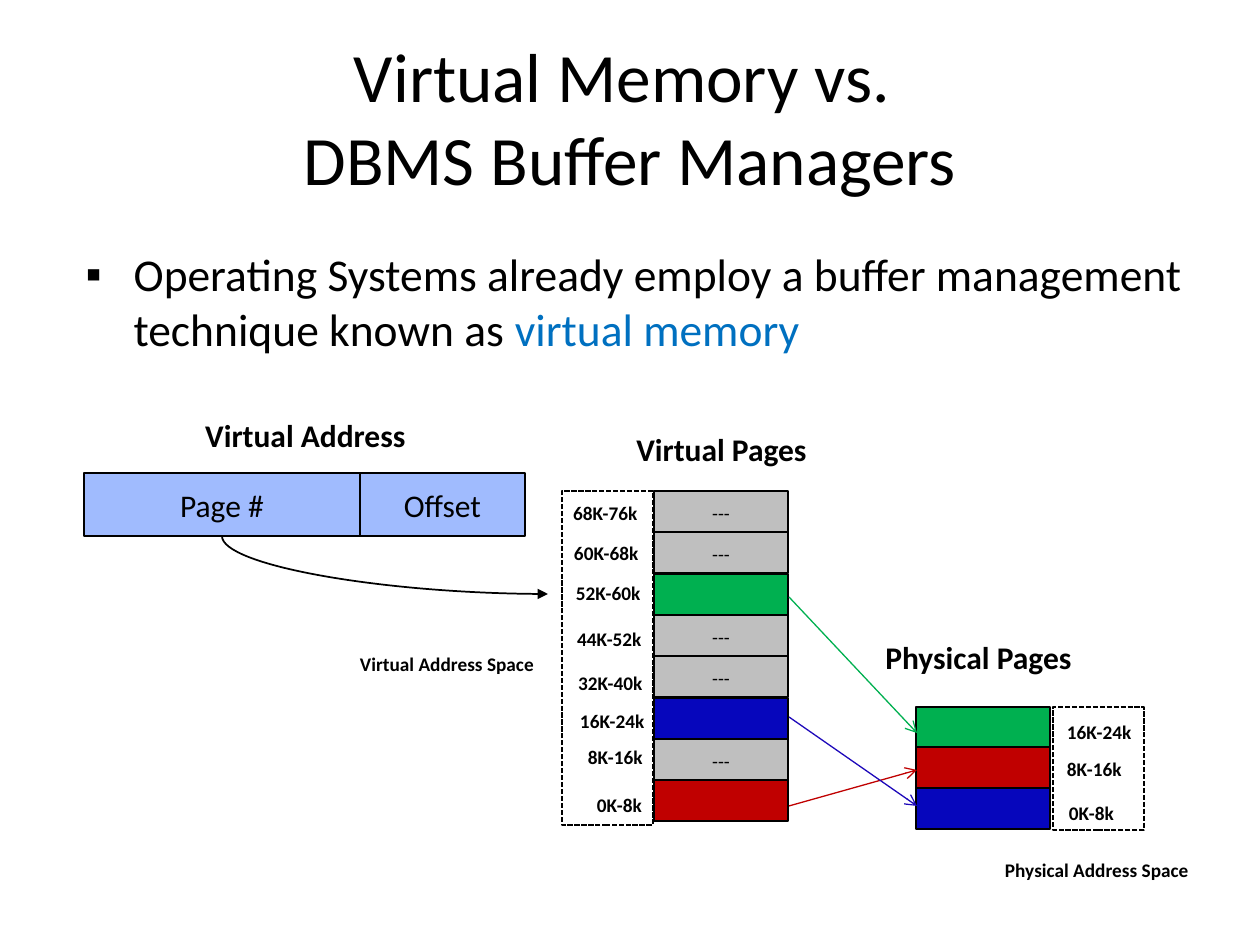
from lxml import etree
from pptx import Presentation
from pptx import util as u
from pptx.dml.color import RGBColor
from pptx.enum import dml, shapes, text
from pptx.oxml import ns

PX = 914400 / 126
FONT = "Calibri"
BLACK = RGBColor(0x00, 0x00, 0x00)
ACCENT = RGBColor(0x00, 0x70, 0xC0)
GRAY = RGBColor(0xBF, 0xBF, 0xBF)
GREEN = RGBColor(0x00, 0xB0, 0x50)
BLUE = RGBColor(0x06, 0x06, 0xBC)
ARROW_BLUE = RGBColor(0x1D, 0x08, 0xBA)
RED = RGBColor(0xC0, 0x00, 0x00)
ADDRESS_FILL = RGBColor(0xA0, 0xBB, 0xFE)

PAGE_WIDTH, PAGE_HEIGHT = 134, 41
LABEL_WIDTHS = {5: 49, 6: 58, 7: 68}

# Fill colour, address range, label left, label top
VIRTUAL_PAGES = [
    (GRAY, "68K-76k", 573, 498),
    (GRAY, "60K-68k", 574, 538),
    (GREEN, "52K-60k", 576, 578),
    (GRAY, "44K-52k", 577, 624),
    (GRAY, "32K-40k", 578, 668),
    (BLUE, "16K-24k", 580, 706),
    (GRAY, "8K-16k", 588, 742),
    (RED, "0K-8k", 597, 790),
]
PHYSICAL_PAGES = [
    (GREEN, "16K-24k", 1067, 717),
    (RED, "8K-16k", 1067, 754),
    (BLUE, "0K-8k", 1069, 798),
]


def px(*lengths):
    return [u.Emu(round(length * PX)) for length in lengths]


def place(shape, *bounds):
    shape.left, shape.top, shape.width, shape.height = px(*bounds)


def format_para(para, size, bold=False, align=None, color=BLACK):
    para.font.name = FONT
    para.font.size = u.Pt(size)
    para.font.bold = bold
    para.font.color.rgb = color
    para.alignment = align


def space_small(para):
    para.line_spacing = 1.15
    para.space_after = u.Pt(10)


def add_title(slide, wording):
    title = slide.shapes.title
    place(title, 63, 37, 1134, 158)
    frame = title.text_frame
    frame.text = wording
    frame.auto_size = text.MSO_AUTO_SIZE.NONE
    frame.vertical_anchor = text.MSO_ANCHOR.MIDDLE
    format_para(frame.paragraphs[0], 39.6, align=text.PP_ALIGN.CENTER)


def add_bullet(slide, wording, emphasis):
    body = slide.placeholders[1]
    place(body, 73, 240, 1166, 705)
    body.text_frame.auto_size = text.MSO_AUTO_SIZE.NONE
    para = body.text_frame.paragraphs[0]
    para.add_run().text = wording
    span = para.add_run()
    span.text = emphasis
    format_para(para, 26)
    span.font.color.rgb = ACCENT
    properties = para._p.get_or_add_pPr()
    hanging = px(48)[0]
    properties.set("marL", str(hanging))
    properties.set("indent", str(-hanging))
    etree.SubElement(properties, ns.qn("a:buFont"), typeface="Arial")
    etree.SubElement(properties, ns.qn("a:buChar"), char="▪")
    # Bullet settings come before the default run properties
    properties.append(properties.find(ns.qn("a:defRPr")))


def add_box(slide, bounds, fill=None, width=1.5, dashed=False):
    box = slide.shapes.add_shape(shapes.MSO_SHAPE.RECTANGLE, *px(*bounds))
    box.shadow.inherit = False
    if fill is None:
        box.fill.background()
    else:
        box.fill.solid()
        box.fill.fore_color.rgb = fill
    box.line.color.rgb = BLACK
    box.line.width = u.Pt(width)
    if dashed:
        box.line.dash_style = dml.MSO_LINE.SQUARE_DOT
    return box


def fill_box(box, wording, size):
    frame = box.text_frame
    frame.text = wording
    frame.vertical_anchor = text.MSO_ANCHOR.MIDDLE
    para = frame.paragraphs[0]
    format_para(para, size, align=text.PP_ALIGN.CENTER)
    return para


def add_label(slide, wording, left, top, width):
    """Small bold text without margins."""
    frame = slide.shapes.add_textbox(*px(left, top, width, 28)).text_frame
    frame.margin_left = frame.margin_right = 0
    frame.margin_top = frame.margin_bottom = 0
    frame.word_wrap = False
    frame.text = wording
    format_para(frame.paragraphs[0], 11, bold=True)
    space_small(frame.paragraphs[0])


def add_heading(slide, wording, left, top):
    frame = slide.shapes.add_textbox(*px(left, top, 315, 50)).text_frame
    frame.word_wrap = True
    frame.text = wording
    format_para(frame.paragraphs[0], 18, bold=True, align=text.PP_ALIGN.CENTER)


def add_pages(slide, pages, left, top, pitch):
    for index, (fill, address, label_left, label_top) in enumerate(pages):
        bounds = left, round(top + index * pitch), PAGE_WIDTH, PAGE_HEIGHT
        box = add_box(slide, bounds, fill)
        if fill == GRAY:
            space_small(fill_box(box, "---", 11))
        add_label(slide, address, label_left, label_top, LABEL_WIDTHS[len(address)])


def add_arrow(slide, ends, color, width=0.75, head="arrow",
              kind=shapes.MSO_CONNECTOR.STRAIGHT):
    arrow = slide.shapes.add_connector(kind, *px(*ends))
    arrow.line.color.rgb = color
    arrow.line.width = u.Pt(width)
    etree.SubElement(arrow.line._get_or_add_ln(), ns.qn("a:tailEnd"), type=head)
    etree.SubElement(arrow._element.spPr, ns.qn("a:effectLst"))
    return arrow


def add_page_lookup(slide):
    """Quarter curve that leaves downwards: a turned, two-point connector."""
    curve = add_arrow(slide, (414, 402, 356, 728), BLACK, 1, "triangle",
                      shapes.MSO_CONNECTOR.CURVE)
    properties = curve._element.spPr
    properties.find(ns.qn("a:xfrm")).set("rot", str(270 * 60000))
    properties.find(ns.qn("a:prstGeom")).set("prst", "curvedConnector2")


def main():
    deck = Presentation()
    deck.slide_width, deck.slide_height = px(1260, 945)
    slide = deck.slides.add_slide(deck.slide_layouts[1])

    add_title(slide, "Virtual Memory vs. \vDBMS Buffer Managers")
    add_bullet(slide, "Operating Systems already employ a buffer management "
               "technique known as ", "virtual memory")

    # Virtual and physical pages with their address ranges
    add_pages(slide, VIRTUAL_PAGES, 654, 491, 41.3)
    add_pages(slide, PHYSICAL_PAGES, 916, 707, 40.3)
    for bounds in ((562, 491, 91, 334), (1053, 707, 91, 123)):
        add_box(slide, bounds, width=1, dashed=True)
    add_label(slide, "Virtual Address Space", 360, 649, 188)
    add_label(slide, "Physical Address Space", 1005, 855, 188)

    # Mapping from virtual to physical pages
    for start, end, color in ((806, 770, RED), (597, 733, GREEN),
                              (717, 806, ARROW_BLUE)):
        add_arrow(slide, (789, start, 917, end), color)

    # Virtual address
    for wording, left, width in (("Page #", 84, 276), ("Offset", 360, 165)):
        box = add_box(slide, (left, 473, width, 63), ADDRESS_FILL, 1)
        fill_box(box, wording, 18)
        box.text_frame.word_wrap = False
    add_page_lookup(slide)

    for wording, left, top in (("Virtual Pages", 564, 424),
                               ("Virtual Address", 148, 410),
                               ("Physical Pages", 821, 632)):
        add_heading(slide, wording, left, top)

    deck.save("out.pptx")


if __name__ == "__main__":
    main()
